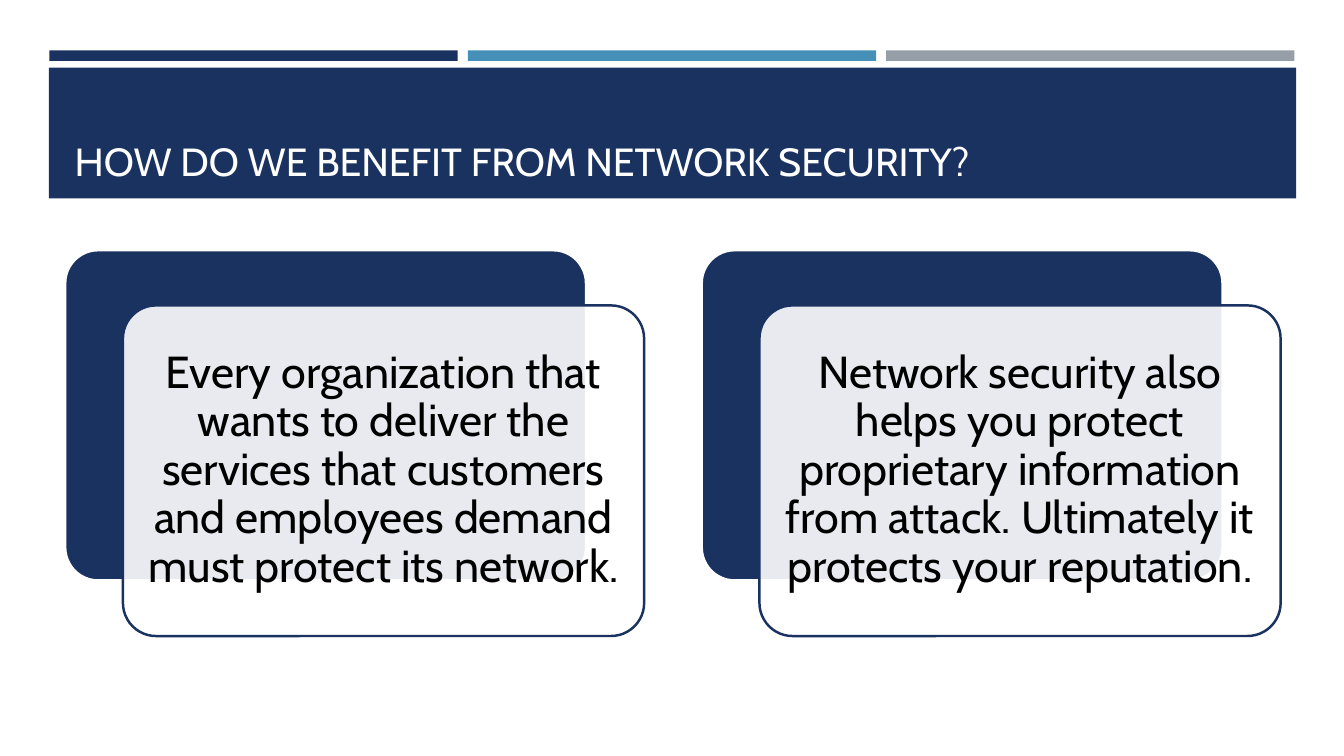
from lxml.etree import SubElement
from pptx import Presentation
from pptx.dml.color import RGBColor
from pptx.enum.shapes import MSO_SHAPE
from pptx.enum.text import MSO_ANCHOR, MSO_AUTO_SIZE, PP_ALIGN
from pptx.oxml.ns import qn
from pptx.util import Inches, Pt

NAVY, BLUE, GREY, WHITE, BLACK = "1A3260", "4590B8", "969FA7", "FFFFFF", "000000"
TITLE = "HOW DO WE BENEFIT FROM NETWORK SECURITY?"
BENEFITS = [
    "Every organization that wants to deliver the services that customers "
    "and employees demand must protect its network.",
    "Network security also helps you protect proprietary information from "
    "attack. Ultimately it protects your reputation.",
]


def colour(value):
    return RGBColor.from_string(value)


def assign(target, values):
    for name, value in values.items():
        setattr(target, name, value)


class Page:
    """Places elements by percentages of the slide's width and height."""

    font = "Cabin"

    def __init__(self, deck):
        self.deck = deck
        self.page = deck.slides.add_slide(deck.slide_layouts[5])

    def place(self, left, top, width, height):
        across, down = self.deck.slide_width / 100, self.deck.slide_height / 100
        return [round(size) for size in
                (left * across, top * down, width * across, height * down)]

    def block(self, area, fill, kind=MSO_SHAPE.RECTANGLE, line=None, weight=1, opacity=100):
        box = self.page.shapes.add_shape(kind, *self.place(*area))
        box.shadow.inherit = False
        box.fill.solid()
        box.fill.fore_color.rgb = colour(fill)
        if opacity < 100:
            tint = box.element.spPr.find(qn("a:solidFill"))[0]
            SubElement(tint, qn("a:alpha"), val=str(opacity * 1000))
        if line:
            box.line.color.rgb = colour(line)
            box.line.width = Pt(weight)
        else:
            box.line.fill.background()
        if kind == MSO_SHAPE.ROUNDED_RECTANGLE:
            box.adjustments[0] = 0.1
        return box

    def label(self, box, text, size, ink, inset, anchor, **layout):
        frame = box.text_frame
        margins = {f"margin_{side}": Inches(inset[side in ("top", "bottom")])
                   for side in ("left", "right", "top", "bottom")}
        assign(frame, {"word_wrap": True, "auto_size": MSO_AUTO_SIZE.NONE,
                       "vertical_anchor": anchor, **margins})
        para = frame.paragraphs[0]
        assign(para, layout)
        span = para.add_run()
        span.text = text
        assign(span.font, {"name": self.font, "size": Pt(size), "bold": False})
        span.font.color.rgb = colour(ink)

    def title(self, area, text):
        box = self.page.shapes.title
        assign(box, dict(zip(("left", "top", "width", "height"), self.place(*area))))
        # Bring the title in front of its band
        box.element.getparent().append(box.element)
        self.label(box, text, 28, WHITE, (0.1, 0.05), MSO_ANCHOR.BOTTOM,
                   alignment=PP_ALIGN.LEFT)

    def card(self, left, top, text):
        width, height = 38.78, 43.73
        rounded = MSO_SHAPE.ROUNDED_RECTANGLE
        self.block((left, top, width, height), NAVY, rounded, WHITE, 2)
        front = self.block((left + 4.31, top + 7.33, width, height),
                           WHITE, rounded, NAVY, 1.75, opacity=90)
        self.label(front, text, 32, BLACK, (0.13, 0.13), MSO_ANCHOR.MIDDLE,
                   alignment=PP_ALIGN.CENTER, line_spacing=0.9)


def main():
    deck = Presentation()
    deck.slide_width, deck.slide_height = Inches(13.33), Inches(7.5)
    page = Page(deck)

    # Header bars, band and title
    for column, fill in enumerate((NAVY, BLUE, GREY)):
        page.block((3.68 + column * 31.13, 6.67, 30.38, 1.4), fill)
    page.block((3.64, 8.93, 92.8, 17.33), NAVY)
    page.title((4.8, 10.27, 90.47, 14.8), TITLE)

    # Benefit cards
    for column, text in enumerate(BENEFITS):
        page.card(4.84 + column * 47.36, 33.07, text)

    deck.save("out.pptx")


if __name__ == "__main__":
    main()
